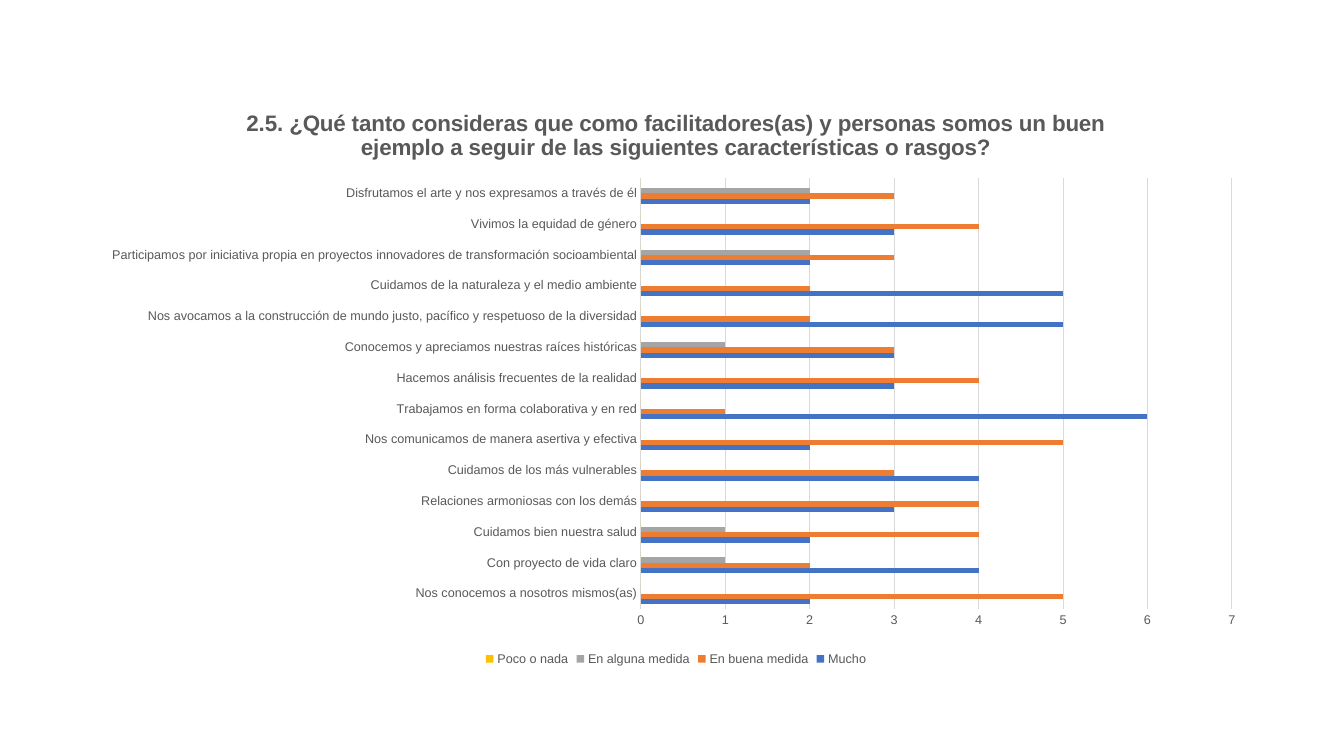
from dataclasses import dataclass

from lxml.etree import SubElement
from pptx import Presentation
from pptx.chart.data import CategoryChartData
from pptx.dml.color import RGBColor
from pptx.enum.chart import (XL_CHART_TYPE as ChartType, XL_LEGEND_POSITION as LegendPos,
                             XL_TICK_MARK as Tick)
from pptx.oxml.ns import qn
from pptx.util import Inches, Pt


@dataclass(frozen=True)
class Theme:
    font: str = "Arial"
    text: str = "595959"
    grid: str = "D9D9D9"
    title_size: float = 16
    label_size: float = 9
    line_width: float = 0.75
    series: tuple = ("4472C4", "ED7D31", "A5A5A5", "FFC000")


TITLE = ("2.5. ¿Qué tanto consideras que como facilitadores(as) y personas somos un buen "
         "ejemplo a seguir de las siguientes características o rasgos?")
RATINGS = ("Mucho", "En buena medida", "En alguna medida", "Poco o nada")
ANSWERS = {
    "Nos conocemos a nosotros mismos(as)": (2, 5, 0, 0),
    "Con proyecto de vida claro": (4, 2, 1, 0),
    "Cuidamos bien nuestra salud": (2, 4, 1, 0),
    "Relaciones armoniosas con los demás": (3, 4, 0, 0),
    "Cuidamos de los más vulnerables": (4, 3, 0, 0),
    "Nos comunicamos de manera asertiva y efectiva": (2, 5, 0, 0),
    "Trabajamos en forma colaborativa y en red": (6, 1, 0, 0),
    "Hacemos análisis frecuentes de la realidad": (3, 4, 0, 0),
    "Conocemos y apreciamos nuestras raíces históricas": (3, 3, 1, 0),
    "Nos avocamos a la construcción de mundo justo, pacífico y respetuoso de la diversidad":
        (5, 2, 0, 0),
    "Cuidamos de la naturaleza y el medio ambiente": (5, 2, 0, 0),
    "Participamos por iniciativa propia en proyectos innovadores de transformación socioambiental":
        (2, 3, 2, 0),
    "Vivimos la equidad de género": (3, 4, 0, 0),
    "Disfrutamos el arte y nos expresamos a través de él": (2, 3, 2, 0),
}


class SurveySlide:
    def __init__(self, prs, theme):
        self.theme = theme
        self.s = prs.slides.add_slide(prs.slide_layouts[6])

    def set_font(self, font, size, bold=False):
        for name, value in {"name": self.theme.font, "size": Pt(size), "bold": bold}.items():
            setattr(font, name, value)
        font.color.rgb = RGBColor.from_string(self.theme.text)

    def set_line(self, line):
        line.color.rgb = RGBColor.from_string(self.theme.grid)
        line.width = Pt(self.theme.line_width)

    def bar_chart(self, ratings, answers, box):
        data = CategoryChartData()
        data.categories = list(answers)
        for rating, values in zip(ratings, zip(*answers.values())):
            data.add_series(rating, values)
        lengths = [Inches(v) for v in box]
        chart = self.s.shapes.add_chart(ChartType.BAR_CLUSTERED, *lengths, data).chart
        self.set_font(chart.font, self.theme.label_size)
        plot = chart.plots[0]
        plot.gap_width = 182
        plot.vary_by_categories = False
        for series, color in zip(plot.series, self.theme.series):
            series.format.fill.solid()
            series.format.fill.fore_color.rgb = RGBColor.from_string(color)
        return chart

    def chart_title(self, chart, text):
        tf = chart.chart_title.text_frame
        r = tf.paragraphs[0].add_run()
        r.text = text
        self.set_font(r.font, self.theme.title_size, bold=True)
        chart.chart_title.include_in_layout = False

    def axes(self, chart, maximum):
        cat, val = chart.category_axis, chart.value_axis
        for axis in (cat, val):
            axis.major_tick_mark = axis.minor_tick_mark = Tick.NONE
            self.set_font(axis.tick_labels.font, self.theme.label_size)
        self.set_line(cat.format.line)
        val.format.line.fill.background()
        scale = {"minimum_scale": 0, "maximum_scale": maximum, "major_unit": 1,
                 "has_major_gridlines": True}
        for name, value in scale.items():
            setattr(val, name, value)
        self.set_line(val.major_gridlines.format.line)

    def legend(self, chart):
        chart.has_legend = True
        chart.legend.position = LegendPos.BOTTOM
        chart.legend.include_in_layout = False
        self.set_font(chart.legend.font, self.theme.label_size)

    def plot_area(self, chart, x, y, w, h):
        """Place the inner plot area, in fractions of the chart's size."""
        area = chart.element.find(".//" + qn("c:plotArea"))
        for old in area.findall(qn("c:layout")):
            area.remove(old)
        layout = SubElement(area, qn("c:layout"))
        area.insert(0, layout)
        manual = SubElement(layout, qn("c:manualLayout"))
        settings = {"layoutTarget": "inner", "xMode": "edge", "yMode": "edge",
                    "x": x, "y": y, "w": w, "h": h}
        for name, value in settings.items():
            SubElement(manual, qn("c:" + name)).set("val", str(value))


def main():
    prs = Presentation()
    prs.slide_width, prs.slide_height = Inches(13.33), Inches(7.5)
    slide = SurveySlide(prs, Theme())
    chart = slide.bar_chart(RATINGS, ANSWERS, (0.9, 0.87, 11.61, 5.78))
    slide.chart_title(chart, TITLE)
    slide.axes(chart, maximum=7)
    slide.legend(chart)
    slide.plot_area(chart, x=0.47, y=0.155, w=0.505, h=0.74)
    prs.save("out.pptx")


if __name__ == "__main__":
    main()
